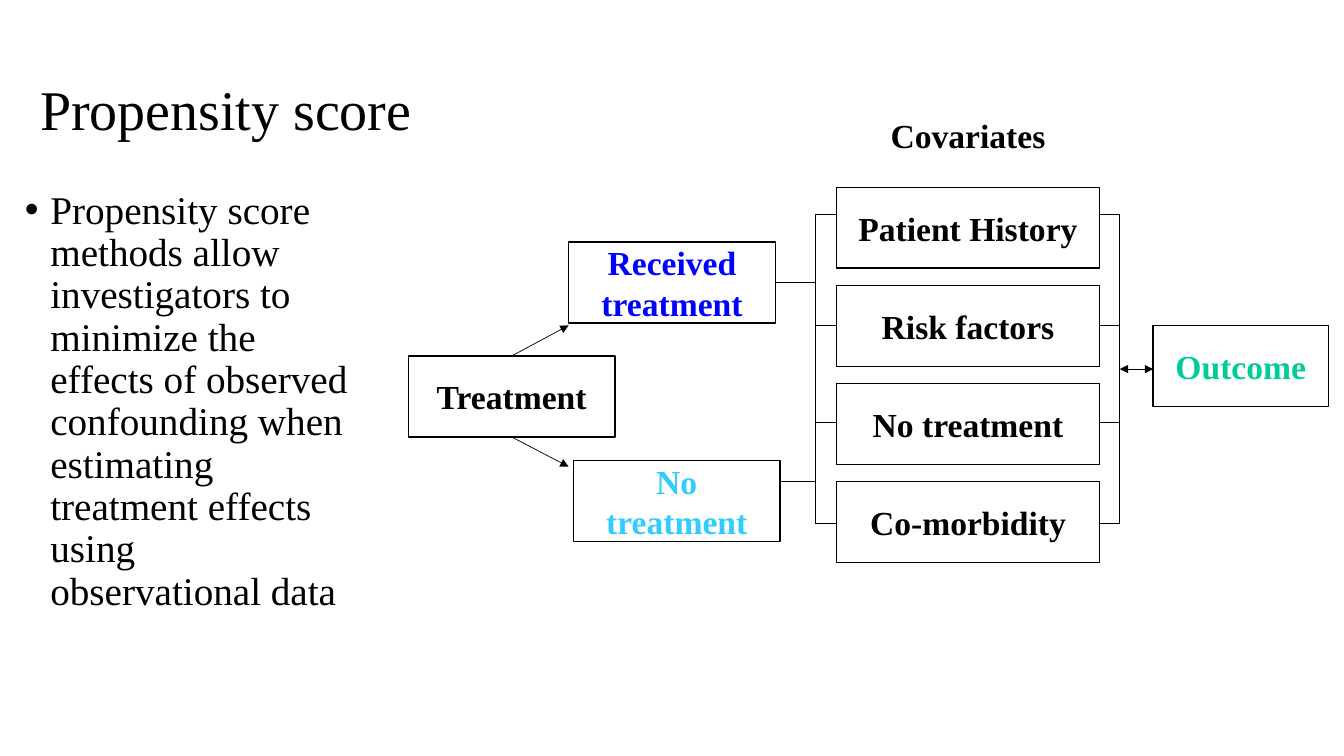
from pptx import Presentation, util as u
from pptx.dml.color import RGBColor
from pptx.enum import shapes, text
from pptx.oxml.ns import qn
from lxml import etree

COLORS = {"black": "000000", "white": "FFFFFF", "blue": "0000FF",
          "sky": "33CCFF", "green": "00CC99"}
BOX_WIDTH, BOX_HEIGHT = 5.21, 2.04


class Diagram:
    font = "Times New Roman"

    def __init__(self, page):
        self.page = page

    def color(self, name):
        return RGBColor.from_string(COLORS[name])

    def add_span(self, para, words, size, color="black", bold=False):
        span = para.add_run()
        span.text = words
        span.font.name = self.font
        span.font.size = u.Pt(size)
        span.font.bold = bold
        span.font.color.rgb = self.color(color)

    def label(self, words, left, top, width, height, size, anchor):
        """Add a plain text box and return its paragraph."""
        box = self.page.shapes.add_textbox(*map(u.Cm, (left, top, width, height)))
        box.text_frame.word_wrap = True
        box.text_frame.vertical_anchor = anchor
        para = box.text_frame.paragraphs[0]
        para.line_spacing = 0.9
        self.add_span(para, words, size)
        return para

    def bullet(self, words, left, top, width, height, size):
        para = self.label(words, left, top, width, height, size, text.MSO_ANCHOR.TOP)
        para.space_before = u.Pt(10)
        props = para._p.get_or_add_pPr()
        props.set("marL", str(u.Cm(0.64)))
        props.set("indent", str(u.Cm(-0.64)))
        etree.SubElement(props, qn("a:buFont"), typeface="Arial")
        etree.SubElement(props, qn("a:buChar"), char="•")

    def box(self, words, left, top, width=BOX_WIDTH, color="black", border="black"):
        box = self.page.shapes.add_shape(
            shapes.MSO_SHAPE.RECTANGLE, *map(u.Cm, (left, top, width, BOX_HEIGHT)))
        box.shadow.inherit = False
        box.fill.solid()
        box.fill.fore_color.rgb = self.color("white")
        box.line.color.rgb = self.color(border)
        box.line.width = u.Pt(1)
        frame = box.text_frame
        frame.word_wrap = True
        frame.vertical_anchor = text.MSO_ANCHOR.MIDDLE
        para = frame.paragraphs[0]
        para.alignment = text.PP_ALIGN.CENTER
        self.add_span(para, words, 24, color, bold=True)

    def line(self, x1, y1, x2, y2, arrows=()):
        """Draw a line; arrows lists the ends that carry a head."""
        link = self.page.shapes.add_connector(
            shapes.MSO_CONNECTOR.STRAIGHT, *map(u.Cm, (x1, y1, x2, y2)))
        link.line.color.rgb = self.color("black")
        link.line.width = u.Pt(0.5)
        properties = link._element.spPr
        for end in arrows:
            etree.SubElement(properties.find(qn("a:ln")), qn(f"a:{end}"), type="triangle")
        etree.SubElement(properties, qn("a:effectLst"))


def main():
    deck = Presentation()
    deck.slide_width, deck.slide_height = u.Cm(33.87), u.Cm(19.05)
    diagram = Diagram(deck.slides.add_slide(deck.slide_layouts[6]))

    diagram.label("Propensity score", 0.76, 0.99, 30.94, 3.68, 40, text.MSO_ANCHOR.MIDDLE)
    diagram.bullet("Propensity score methods allow investigators to minimize the effects "
                   "of observed confounding when estimating treatment effects using "
                   "observational data", 0.38, 4.67, 8.79, 14, 28)

    # Treatment and its two arms
    treatment_left, treatment_top, arm_left = 10.29, 8.97, 14.33
    treatment_middle = treatment_left + BOX_WIDTH / 2
    diagram.box("Treatment", treatment_left, treatment_top)
    diagram.line(treatment_middle, treatment_top, arm_left, 8.2, ["tailEnd"])
    diagram.line(treatment_middle, treatment_top + BOX_HEIGHT, arm_left, 11.76, ["tailEnd"])

    left_trunk, right_trunk = 20.55, 28.22
    arms = [("Received treatment", arm_left, 6.1, "blue", 7.12),
            ("No treatment", 14.45, 11.61, "sky", 12.14)]
    for words, left, top, color, link_y in arms:
        diagram.box(words, left, top, color=color)
        diagram.line(left + BOX_WIDTH, link_y, left_trunk, link_y)

    # Covariates between the two trunks
    column_left, column_width, first_top, pitch = 21.08, 6.63, 4.72, 2.47
    diagram.box("Covariates", column_left, 2.39, column_width, border="white")
    link_ys = [5.4, 8.2, 10.65, 13.18]
    covariates = ["Patient History", "Risk factors", "No treatment", "Co-morbidity"]
    for row, (words, link_y) in enumerate(zip(covariates, link_ys)):
        diagram.box(words, column_left, first_top + row * pitch, column_width)
        diagram.line(left_trunk, link_y, column_left, link_y)
        diagram.line(column_left + column_width, link_y, right_trunk, link_y)
    for trunk in (left_trunk, right_trunk):
        diagram.line(trunk, link_ys[0], trunk, link_ys[-1])

    outcome_left = 29.06
    diagram.box("Outcome", outcome_left, 8.2, 4.42, color="green")
    diagram.line(right_trunk, 9.3, outcome_left, 9.3, ["headEnd", "tailEnd"])

    deck.save("out.pptx")


if __name__ == "__main__":
    main()
